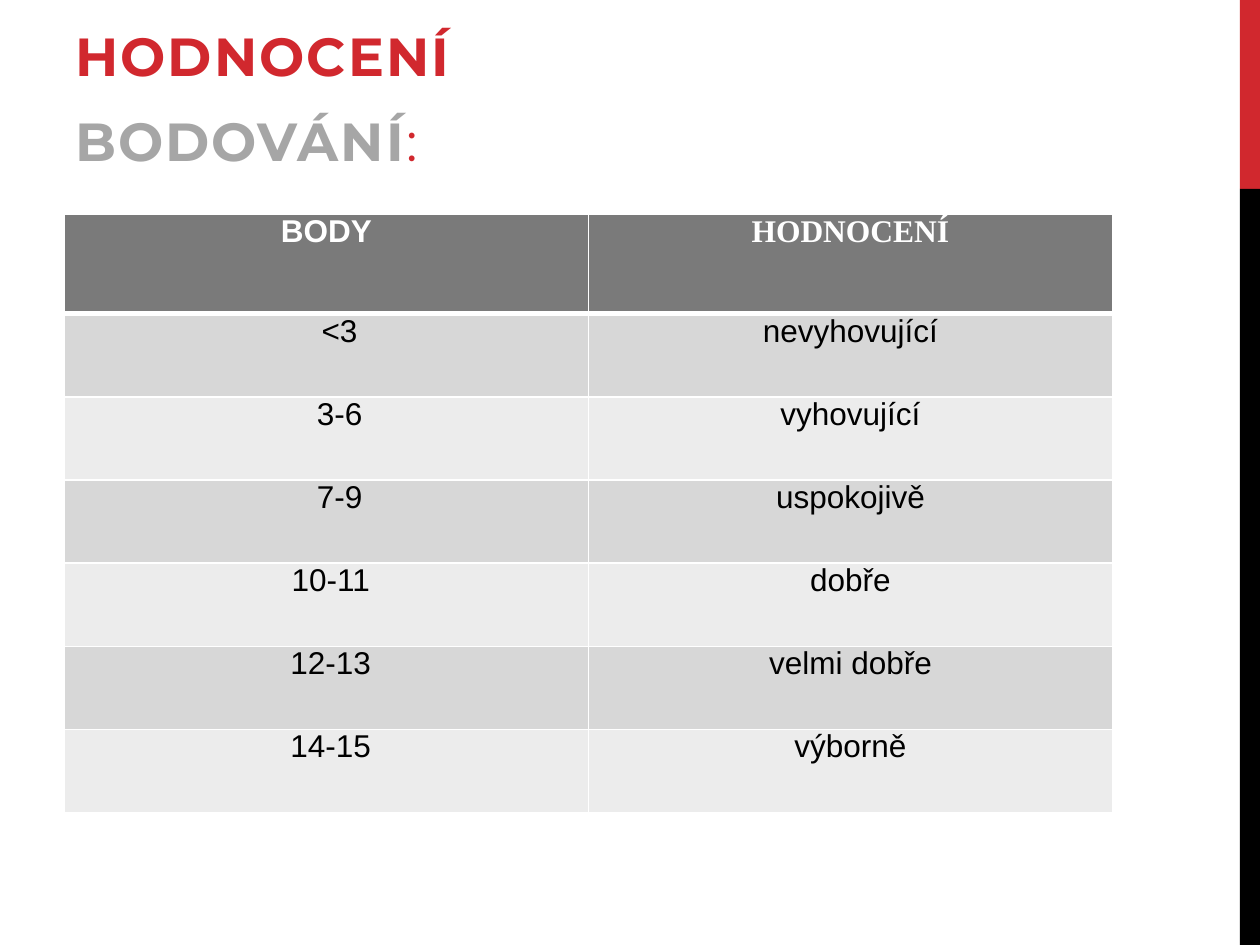
from dataclasses import dataclass

import pptx
import pptx.dml.color
import pptx.enum.shapes
import pptx.enum.text
import pptx.oxml
import pptx.oxml.ns
import pptx.util
from pptx.util import Inches

CENTER = pptx.enum.text.PP_ALIGN.CENTER


@dataclass(frozen=True)
class Theme:
    red: str = "D1282E"
    black: str = "000000"
    white: str = "FFFFFF"
    grey: str = "A6A6A6"
    header: str = "7A7A7A"
    bands: tuple = ("D7D7D7", "ECECEC")
    title_font: str = "Montserrat"
    table_font: str = "Arial"
    serif_font: str = "Times New Roman"
    title_size: float = 30.6
    table_size: float = 18
    tracking: float = 1.2


def rgb(color):
    return pptx.dml.color.RGBColor.from_string(color)


class SlideBuilder:
    def __init__(self, slide, theme):
        self.slide = slide
        self.theme = theme

    def bar(self, left, top, width, height, color):
        bar = self.slide.shapes.add_shape(
            pptx.enum.shapes.MSO_SHAPE.RECTANGLE,
            Inches(left), Inches(top), Inches(width), Inches(height))
        bar.shadow.inherit = False
        bar.fill.solid()
        bar.fill.fore_color.rgb = rgb(color)
        bar.line.fill.background()

    def heading(self, left, top, width, height, lines):
        """Each line is a list of (text, color, bold) runs."""
        box = self.slide.shapes.add_textbox(
            Inches(left), Inches(top), Inches(width), Inches(height))
        frame = box.text_frame
        frame.word_wrap = True
        frame.vertical_anchor = pptx.enum.text.MSO_ANCHOR.BOTTOM
        for index, runs in enumerate(lines):
            line = frame.add_paragraph() if index else frame.paragraphs[0]
            line.space_before = line.space_after = pptx.util.Pt(6)
            line.font.name = self.theme.title_font
            line.font.size = pptx.util.Pt(self.theme.title_size)
            for text, color, bold in runs:
                run = line.add_run()
                run.text = text
                run.font.bold = bold
                run.font.color.rgb = rgb(color)
                run._r.get_or_add_rPr().set("spc", str(round(self.theme.tracking * 100)))

    def table(self, left, top, column_widths, row_heights):
        frame = self.slide.shapes.add_table(
            len(row_heights), len(column_widths), Inches(left), Inches(top),
            Inches(sum(column_widths)), Inches(sum(row_heights)))
        for column, width in zip(frame.table.columns, column_widths):
            column.width = Inches(width)
        for row, height in zip(frame.table.rows, row_heights):
            row.height = Inches(height)
        return frame.table

    def cell(self, cell, text, fill, color, font, bold=False, indent=0, top=1, bottom=1):
        """Fill one table cell; top and bottom are border widths in points."""
        cell.margin_left = Inches(0.07 + indent)
        cell.margin_right = Inches(0.07)
        cell.margin_top = cell.margin_bottom = 0
        cell.text = text
        label = cell.text_frame.paragraphs[0]
        label.alignment = CENTER
        label.font.name = font
        label.font.size = pptx.util.Pt(self.theme.table_size)
        label.font.bold = bold
        label.font.color.rgb = rgb(color)
        cell.fill.solid()
        cell.fill.fore_color.rgb = rgb(fill)
        properties = cell._tc.get_or_add_tcPr()
        borders = {"lnL": 1, "lnR": 1, "lnT": top, "lnB": bottom}
        for position, (side, width) in enumerate(borders.items()):
            properties.insert(position, pptx.oxml.parse_xml(
                f'<a:{side} {pptx.oxml.ns.nsdecls("a")} w="{pptx.util.Pt(width)}">'
                f'<a:solidFill><a:srgbClr val="{self.theme.white}"/></a:solidFill>'
                f'</a:{side}>'))


def main():
    deck = pptx.Presentation()
    deck.slide_width, deck.slide_height = Inches(10), Inches(7.5)
    theme = Theme()
    builder = SlideBuilder(deck.slides.add_slide(deck.slide_layouts[6]), theme)

    builder.bar(9.84, 0, 0.16, 1.5, theme.red)
    builder.bar(9.84, 1.5, 0.16, 6, theme.black)
    builder.heading(0.5, 0.25, 8.5, 1.17, [
        [("HODNOCENÍ", theme.red, True)],
        [("BODOVÁNÍ", theme.grey, True), (":", theme.red, False)],
    ])

    # Points, grade, indent of the points
    grades = [
        ("<3", "nevyhovující", 0.21),
        ("3-6", "vyhovující", 0.21),
        ("7-9", "uspokojivě", 0.21),
        ("10-11", "dobře", 0.07),
        ("12-13", "velmi dobře", 0.07),
        ("14-15", "výborně", 0.07),
    ]
    table = builder.table(0.51, 1.7, [4.16] * 2, [0.79] + [0.66] * len(grades))
    headers = [("BODY", theme.table_font), ("HODNOCENÍ", theme.serif_font)]
    for column, (header, font) in enumerate(headers):
        builder.cell(table.cell(0, column), header, theme.header, theme.white,
                     font, bold=True, bottom=3)
    for row, (points, grade, indent) in enumerate(grades, start=1):
        fill = theme.bands[(row - 1) % 2]
        top = 3 if row == 1 else 1
        for column, (text, shift) in enumerate([(points, indent), (grade, 0)]):
            builder.cell(table.cell(row, column), text, fill, theme.black,
                         theme.table_font, indent=shift, top=top)

    deck.save("out.pptx")


if __name__ == "__main__":
    main()
